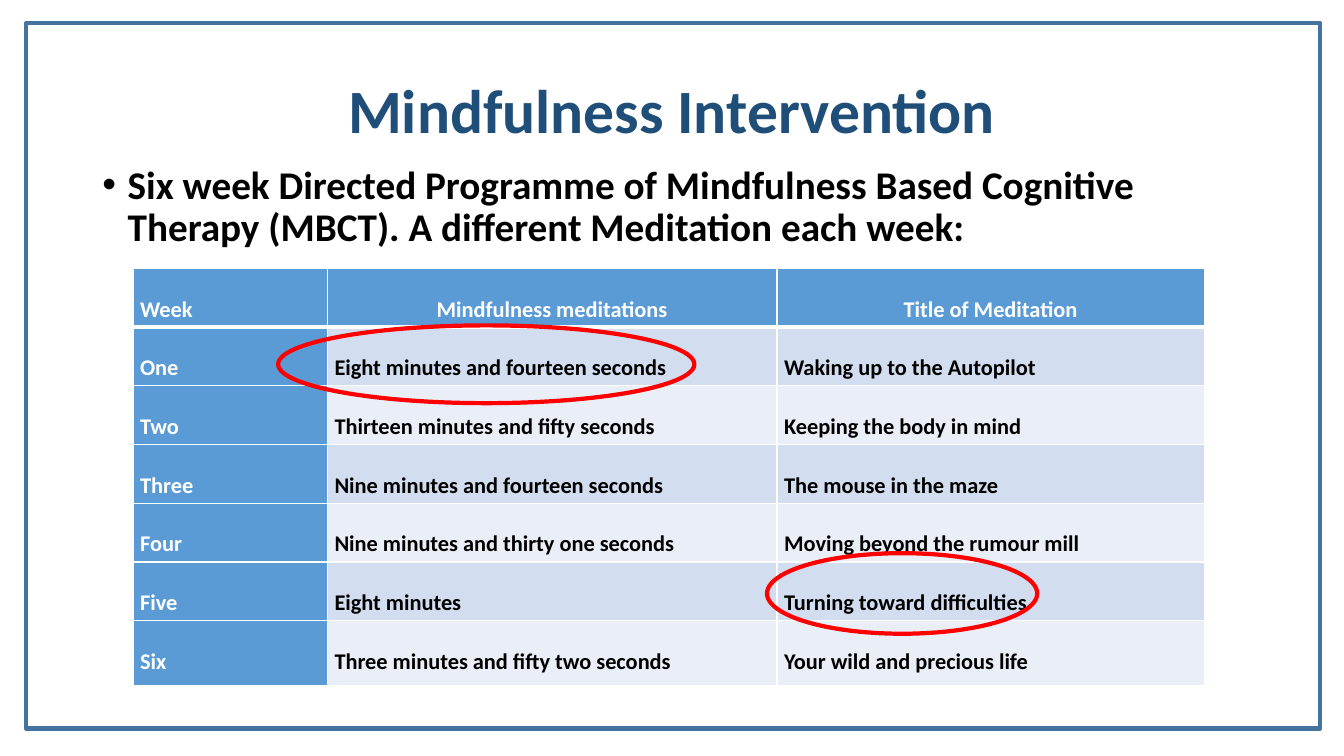
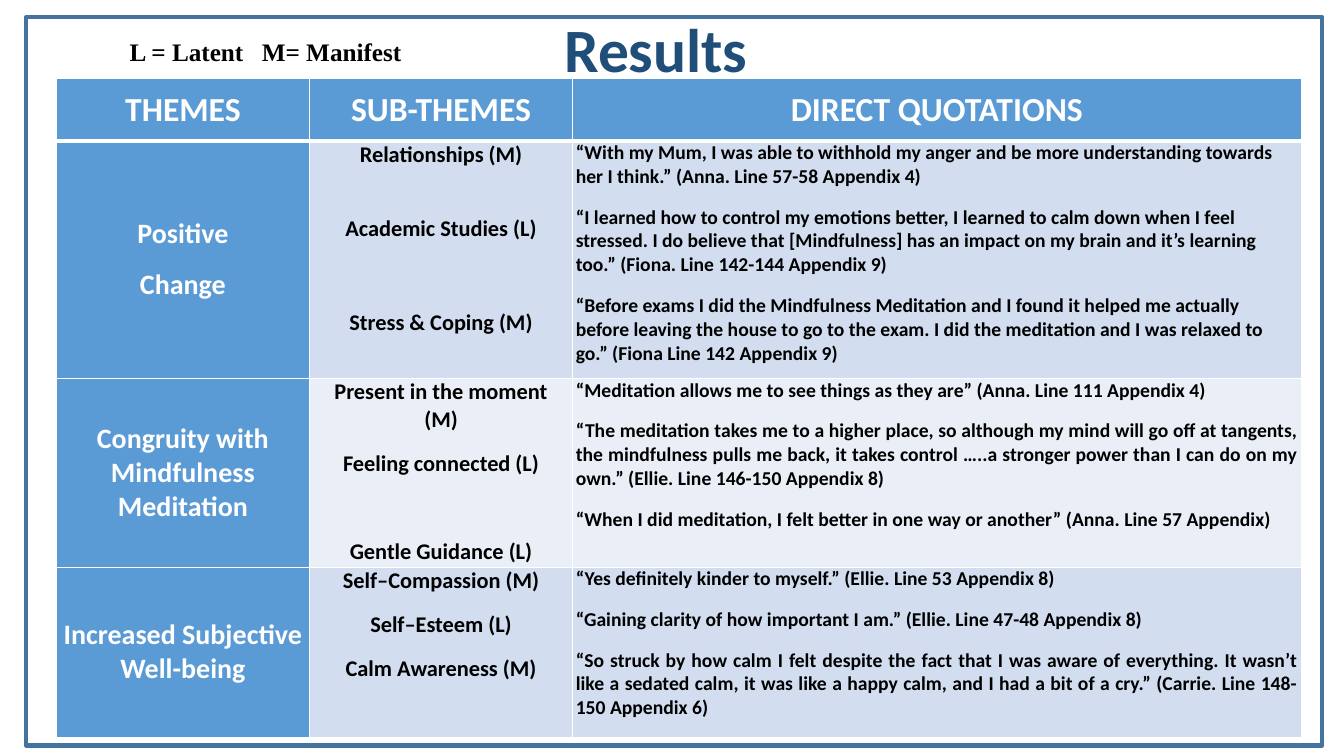
from dataclasses import dataclass

from lxml import etree
from pptx import Presentation
from pptx.dml.color import RGBColor
from pptx.enum.shapes import MSO_SHAPE
from pptx.enum.text import MSO_ANCHOR, PP_ALIGN
from pptx.oxml.ns import qn
from pptx.util import Cm, Pt

LEFT, CENTER, JUSTIFY = PP_ALIGN.LEFT, PP_ALIGN.CENTER, PP_ALIGN.JUSTIFY
TOP, MIDDLE = MSO_ANCHOR.TOP, MSO_ANCHOR.MIDDLE
RECTANGLE, OVAL = MSO_SHAPE.RECTANGLE, MSO_SHAPE.OVAL


# Theme
@dataclass(frozen=True)
class Theme:
    font: str = "Calibri"
    legend_font: str = "Times New Roman"
    title: str = "1F4E79"
    frame: str = "43739E"
    mark: str = "FF0000"
    head: str = "5B9BD5"
    bands: tuple[str, str] = ("D2DEEF", "EAEFF7")
    light: str = "FFFFFF"
    dark: str = "000000"
    title_size: int = 44
    body_size: int = 28
    head_size: int = 24
    theme_size: int = 20
    legend_size: int = 18
    cell_size: int = 16
    quote_size: int = 14
    thin: int = 1
    thick: int = 3


THEME = Theme()


# Descriptions of repeated elements
@dataclass(frozen=True)
class Area:
    """Left, top, width and height in centimetres."""
    left: float
    top: float
    width: float
    height: float

    def lengths(self):
        return Cm(self.left), Cm(self.top), Cm(self.width), Cm(self.height)


@dataclass(frozen=True)
class Style:
    size: int
    color: str = THEME.dark
    align: PP_ALIGN = LEFT
    anchor: MSO_ANCHOR = TOP
    spacing: float = 1.0
    gap: float = 12
    font: str = THEME.font


@dataclass(frozen=True)
class Line:
    text: str
    gap: float


@dataclass(frozen=True)
class Cell:
    lines: tuple[str | Line, ...]
    style: Style


@dataclass(frozen=True)
class Grid:
    left: float
    top: float
    columns: tuple[float, ...]
    rows: tuple[float, ...]
    inset: float


TITLE = Style(THEME.title_size, THEME.title, CENTER, MIDDLE, 0.9)
BODY = Style(THEME.body_size, spacing=0.9)
LEGEND = Style(THEME.legend_size, anchor=MIDDLE, font=THEME.legend_font)

WEEK = Style(THEME.cell_size, THEME.light, spacing=2.0)
WEEK_HEAD = Style(THEME.cell_size, THEME.light, CENTER, spacing=2.0)
SESSION = Style(THEME.cell_size, spacing=2.0)

RESULT_HEAD = Style(THEME.head_size, THEME.light, CENTER, MIDDLE)
TOPIC = Style(THEME.theme_size, THEME.light, CENTER, MIDDLE)
SUB_THEME = Style(THEME.cell_size, align=CENTER)
QUOTE = Style(THEME.quote_size)
QUOTE_JUSTIFIED = Style(THEME.quote_size, align=JUSTIFY)


# Content
MEDITATIONS = (
    ("One", "Eight minutes and fourteen seconds", "Waking up to the Autopilot"),
    ("Two", "Thirteen minutes and fifty seconds", "Keeping the body in mind"),
    ("Three", "Nine minutes and fourteen seconds", "The mouse in the maze"),
    ("Four", "Nine minutes and thirty one seconds", "Moving beyond the rumour mill"),
    ("Five", "Eight minutes", "Turning toward difficulties"),
    ("Six", "Three minutes and fifty two seconds", "Your wild and precious life"),
)

RESULTS = (
    (
        Cell(("Positive", "Change"), TOPIC),
        Cell(("Relationships (M)", Line("Academic Studies (L)", 33.5),
              Line("Stress & Coping (M)", 47.5)), SUB_THEME),
        Cell((
            "“With my Mum, I was able to withhold my anger and be more understanding "
            "towards her I think.” (Anna. Line 57-58 Appendix 4)",
            "“I learned how to control my emotions better, I learned to calm down when "
            "I feel stressed. I do believe that [Mindfulness] has an impact on my brain "
            "and it’s learning too.” (Fiona. Line 142-144 Appendix 9)",
            "“Before exams I did the Mindfulness Meditation and I found it helped me "
            "actually before leaving the house to go to the exam. I did the meditation "
            "and I was relaxed to go.” (Fiona Line 142 Appendix 9)",
        ), QUOTE),
    ),
    (
        Cell(("Congruity with Mindfulness Meditation",), TOPIC),
        Cell(("Present in the moment\v(M)", "Feeling connected (L)",
              Line("Gentle Guidance (L)", 43.5)), SUB_THEME),
        Cell((
            "“Meditation allows me to see things as they are” (Anna. Line 111 Appendix 4)",
            "“The meditation takes me to a higher place, so although my mind will go off "
            "at tangents, the mindfulness pulls me back, it takes control …..a stronger "
            "power than I can do on my own.” (Ellie. Line 146-150 Appendix 8)",
            "“When I did meditation, I felt better in one way or another” "
            "(Anna. Line 57 Appendix)",
        ), QUOTE_JUSTIFIED),
    ),
    (
        Cell(("Increased Subjective Well-being",), TOPIC),
        Cell(("Self–Compassion (M)", "Self–Esteem (L)", "Calm Awareness (M)"), SUB_THEME),
        Cell((
            "“Yes definitely kinder to myself.” (Ellie. Line 53 Appendix 8)",
            "“Gaining clarity of how important I am.” (Ellie. Line 47-48 Appendix 8)",
            "“So struck by how calm I felt despite the fact that I was aware of "
            "everything. It wasn’t like a sedated calm, it was like a happy calm, and I "
            "had a bit of a cry.” (Carrie. Line 148-150 Appendix 6)",
        ), QUOTE_JUSTIFIED),
    ),
)


# Text
def write_lines(frame, lines: tuple[str | Line, ...], style: Style) -> None:
    for index, line in enumerate(lines):
        if isinstance(line, str):
            line = Line(line, style.gap)
        para = frame.add_paragraph() if index else frame.paragraphs[0]
        para.text = line.text
        para.alignment = style.align
        para.line_spacing = style.spacing
        if index:
            para.space_before = Pt(line.gap)
        para.font.name = style.font
        para.font.size = Pt(style.size)
        para.font.bold = True
        para.font.color.rgb = RGBColor.from_string(style.color)


def add_text(page, area: Area, text: str, style: Style,
             bullet: bool = False, tab: float | None = None) -> None:
    frame = page.shapes.add_textbox(*area.lengths()).text_frame
    frame.word_wrap = True
    frame.vertical_anchor = style.anchor
    properties = frame.paragraphs[0]._p.get_or_add_pPr()
    if bullet:
        properties.set("marL", str(Cm(0.64)))
        properties.set("indent", str(-Cm(0.64)))
        etree.SubElement(properties, qn("a:buFont"), typeface="Arial")
        etree.SubElement(properties, qn("a:buChar"), char="•")
    if tab is not None:
        stops = etree.SubElement(properties, qn("a:tabLst"))
        etree.SubElement(stops, qn("a:tab"), pos=str(Cm(tab)), algn="l")
    write_lines(frame, (text,), style)


# Outlines
def add_outline(page, kind: MSO_SHAPE, area: Area, color: str) -> None:
    shape = page.shapes.add_shape(kind, *area.lengths())
    shape.shadow.inherit = False
    shape.fill.background()
    shape.line.color.rgb = RGBColor.from_string(color)
    shape.line.width = Pt(THEME.thick)


# Tables
def set_borders(cell, row: int) -> None:
    widths = {
        "L": THEME.thin,
        "R": THEME.thin,
        "T": THEME.thick if row == 1 else THEME.thin,
        "B": THEME.thick if row == 0 else THEME.thin,
    }
    properties = cell._tc.get_or_add_tcPr()
    for side, width in widths.items():
        border = etree.SubElement(properties, qn(f"a:ln{side}"), w=str(Pt(width)))
        fill = etree.SubElement(border, qn("a:solidFill"))
        etree.SubElement(fill, qn("a:srgbClr"), val=THEME.light)


def add_grid(page, grid: Grid, content: list[tuple[Cell, ...]]) -> None:
    area = Area(grid.left, grid.top, sum(grid.columns), sum(grid.rows))
    table = page.shapes.add_table(
        len(grid.rows), len(grid.columns), *area.lengths()).table
    for column, width in zip(table.columns, grid.columns):
        column.width = Cm(width)
    for row, height in zip(table.rows, grid.rows):
        row.height = Cm(height)
    for row_index, row_cells in enumerate(content):
        for column_index, entry in enumerate(row_cells):
            cell = table.cell(row_index, column_index)
            cell.margin_left = cell.margin_right = Cm(grid.inset)
            cell.margin_top = cell.margin_bottom = 0
            cell.vertical_anchor = entry.style.anchor
            set_borders(cell, row_index)
            is_head = row_index == 0 or column_index == 0
            color = THEME.head if is_head else THEME.bands[(row_index - 1) % 2]
            cell.fill.solid()
            cell.fill.fore_color.rgb = RGBColor.from_string(color)
            write_lines(cell.text_frame, entry.lines, entry.style)


# Slides
def add_intervention(page) -> None:
    add_text(page, Area(2.33, 1.02, 29.21, 3.68), "Mindfulness Intervention", TITLE)
    add_text(page, Area(2.33, 4.04, 29.21, 2.6),
             "Six week Directed Programme of Mindfulness Based Cognitive Therapy "
             "(MBCT). A different Meditation each week:", BODY, bullet=True)
    head = (Cell(("Week",), WEEK), Cell(("Mindfulness meditations",), WEEK_HEAD),
            Cell(("Title of Meditation",), WEEK_HEAD))
    weeks = [(Cell((week,), WEEK), Cell((duration,), SESSION), Cell((name,), SESSION))
             for week, duration, name in MEDITATIONS]
    grid = Grid(3.35, 6.76, (4.9, 11.33, 10.77), (1.48,) * 6 + (1.63,), 0.18)
    add_grid(page, grid, [head, *weeks])
    add_outline(page, RECTANGLE, Area(0.66, 0.58, 32.61, 17.78), THEME.frame)
    for area in (Area(7.01, 8.2, 10.49, 1.96), Area(19.33, 13.94, 6.81, 2.03)):
        add_outline(page, OVAL, area, THEME.mark)


def add_results(page) -> None:
    add_text(page, Area(0.66, 0, 31.75, 2.66), "Results", TITLE)
    head = tuple(Cell((name,), RESULT_HEAD)
                 for name in ("THEMES", "SUB-THEMES", "DIRECT QUOTATIONS"))
    grid = Grid(1.42, 1.98, (6.38, 6.63, 18.36), (1.57, 5.99, 4.75, 4.29), 0.08)
    add_grid(page, grid, [head, *RESULTS])
    add_text(page, Area(3.02, 0.8, 7.6, 1), "L = Latent\tM= Manifest", LEGEND, tab=3.33)
    add_outline(page, RECTANGLE, Area(0.66, 0.43, 32.66, 18.36), THEME.frame)


def main() -> None:
    deck = Presentation()
    deck.slide_width, deck.slide_height = Cm(33.87), Cm(19.05)
    blank = deck.slide_layouts[6]
    for build in (add_intervention, add_results):
        build(deck.slides.add_slide(blank))
    deck.save("out.pptx")


if __name__ == "__main__":
    main()
